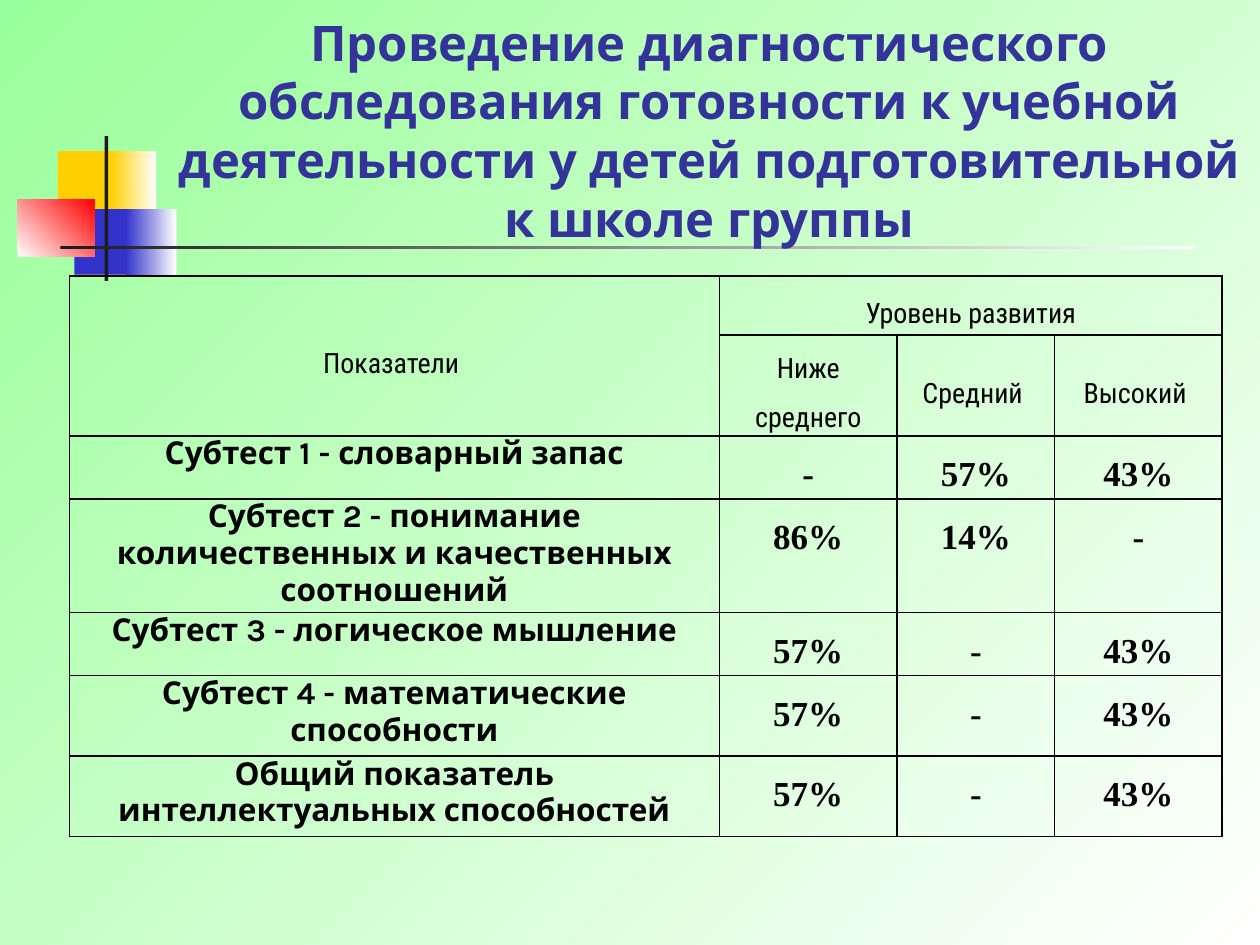
from dataclasses import dataclass
from lxml.etree import SubElement
from pptx import Presentation
from pptx.dml.color import RGBColor as Rgb
from pptx.enum.shapes import MSO_SHAPE as Shape
from pptx.enum.text import MSO_ANCHOR as Anchor, PP_ALIGN as Align
from pptx.oxml.ns import qn
from pptx.util import Inches, Pt


@dataclass(frozen=True)
class Type:
    font: str
    size: int
    bold: bool
    color: str = "000000"
    lead: float = 1.0


@dataclass(frozen=True)
class Theme:
    mint: str = "99FF99"
    white: str = "FFFFFF"
    gold: str = "FFCF01"
    blue: str = "3333CC"
    red: str = "FF0000"
    ink: str = "1C1C1C"
    rule: str = "000000"
    title: Type = Type("Karla", 28, True, "333399")
    head: Type = Type("Roboto Condensed", 16, False, lead=1.5)
    label: Type = Type("Karla", 18, True)
    value: Type = Type("Times New Roman", 20, True, lead=1.5)


class Page:
    """Places elements on a grid of 100 columns by 75 rows."""

    def __init__(self, deck, theme):
        self.theme = theme
        self.unit = deck.slide_width / 100
        self.slide = deck.slides.add_slide(deck.slide_layouts[6])

    def grid(self, *cells):
        return [round(n * self.unit) for n in cells]

    def paint(self, fill, start, end=None, angle=0):
        """Solid fill, or a gradient whose angle runs clockwise."""
        if end is None:
            fill.solid()
            fill.fore_color.rgb = Rgb.from_string(start)
            return
        fill.gradient()
        fill.gradient_angle = -angle % 360
        for stop, color, place in zip(fill.gradient_stops, (start, end), (0, 1)):
            stop.color.rgb = Rgb.from_string(color)
            stop.position = place

    def back(self, start, end, angle):
        self.paint(self.slide.background.fill, start, end, angle)

    def block(self, box, *paint):
        shape = self.slide.shapes.add_shape(Shape.RECTANGLE, *self.grid(*box))
        shape.shadow.inherit = False
        shape.line.fill.background()
        self.paint(shape.fill, *paint)

    def set_text(self, frame, text, kind):
        frame.word_wrap = True
        para = frame.paragraphs[0]
        para.text = text
        para.alignment = Align.CENTER
        para.line_spacing = kind.lead
        font = para.font
        font.name, font.size, font.bold = kind.font, Pt(kind.size), kind.bold
        font.color.rgb = Rgb.from_string(kind.color)

    def label(self, box, text, kind):
        frame = self.slide.shapes.add_textbox(*self.grid(*box)).text_frame
        frame.vertical_anchor = Anchor.MIDDLE
        self.set_text(frame, text, kind)

    def border(self, cell):
        props = cell._tc.get_or_add_tcPr()
        for side in ("a:lnL", "a:lnR", "a:lnT", "a:lnB"):
            line = SubElement(props, qn(side), w=str(Pt(1)))
            fill = SubElement(line, qn("a:solidFill"))
            SubElement(fill, qn("a:srgbClr"), val=self.theme.rule)

    def table(self, left, top, cols, rows, data, spans, heads):
        """Fill a ruled table; spans lists pairs of corner cells to merge."""
        box = self.grid(left, top, sum(cols), sum(rows))
        table = self.slide.shapes.add_table(len(rows), len(cols), *box).table
        table.first_row = table.horz_banding = False
        for col, size in zip(table.columns, self.grid(*cols)):
            col.width = size
        for row, size in zip(table.rows, self.grid(*rows)):
            row.height = size
        for r, line in enumerate(data):
            for c, text in enumerate(line):
                cell = table.cell(r, c)
                self.border(cell)
                cell.fill.background()
                cell.margin_left = cell.margin_right = Inches(0.07)
                cell.margin_top = cell.margin_bottom = 0
                cell.vertical_anchor = Anchor.MIDDLE if r < heads else Anchor.TOP
                kind = self.theme.value if c else self.theme.label
                if text:
                    self.set_text(cell.text_frame, text, self.theme.head if r < heads else kind)
        for first, last in spans:
            table.cell(*first).merge(table.cell(*last))


def main():
    deck = Presentation()
    deck.slide_width, deck.slide_height = Inches(10), Inches(7.5)
    theme = Theme()
    page = Page(deck, theme)
    page.back(theme.mint, theme.white, 45)

    page.block((4.6, 12, 4.8, 5.2), theme.gold)
    page.block((8.8, 12, 3.6, 5.2), theme.gold, theme.white)
    page.block((5.9, 16.6, 4.6, 5.2), theme.blue)
    page.block((10, 16.6, 4, 5.2), theme.blue, theme.white)
    page.block((1.4, 15.8, 6.1, 4.6), theme.white, theme.red, 315)
    page.block((8.3, 10.8, 0.3, 11.5), theme.ink)
    page.block((4.8, 19.5, 90, 0.3), theme.ink, theme.white)

    page.label(
        (12.6, 2.3, 87.4, 16),
        "Проведение диагностического обследования готовности к учебной "
        "деятельности у детей подготовительной к школе группы",
        theme.title,
    )
    data = [
        ("Показатели ", "Уровень развития", "", ""),
        ("", "Ниже среднего", "Средний ", "Высокий "),
        ("Субтест 1 - словарный запас", "-", "57%", "43%"),
        ("Субтест 2 - понимание количественных и качественных соотношений",
         "86%", "14%", "-"),
        ("Субтест 3 - логическое мышление", "57%", "-", "43%"),
        ("Субтест 4 - математические способности", "57%", "-", "43%"),
        ("Общий показатель интеллектуальных способностей", "57%", "-", "43%"),
    ]
    page.table(
        5.5, 21.9,
        cols=(51.6, 14.1, 12.5, 13.3),
        rows=(4.7, 7.8, 4.6, 8.8, 4.6, 6.4, 6.4),
        data=data,
        spans=[((0, 0), (1, 0)), ((0, 1), (0, 3))],
        heads=2,
    )
    deck.save("out.pptx")


if __name__ == "__main__":
    main()
